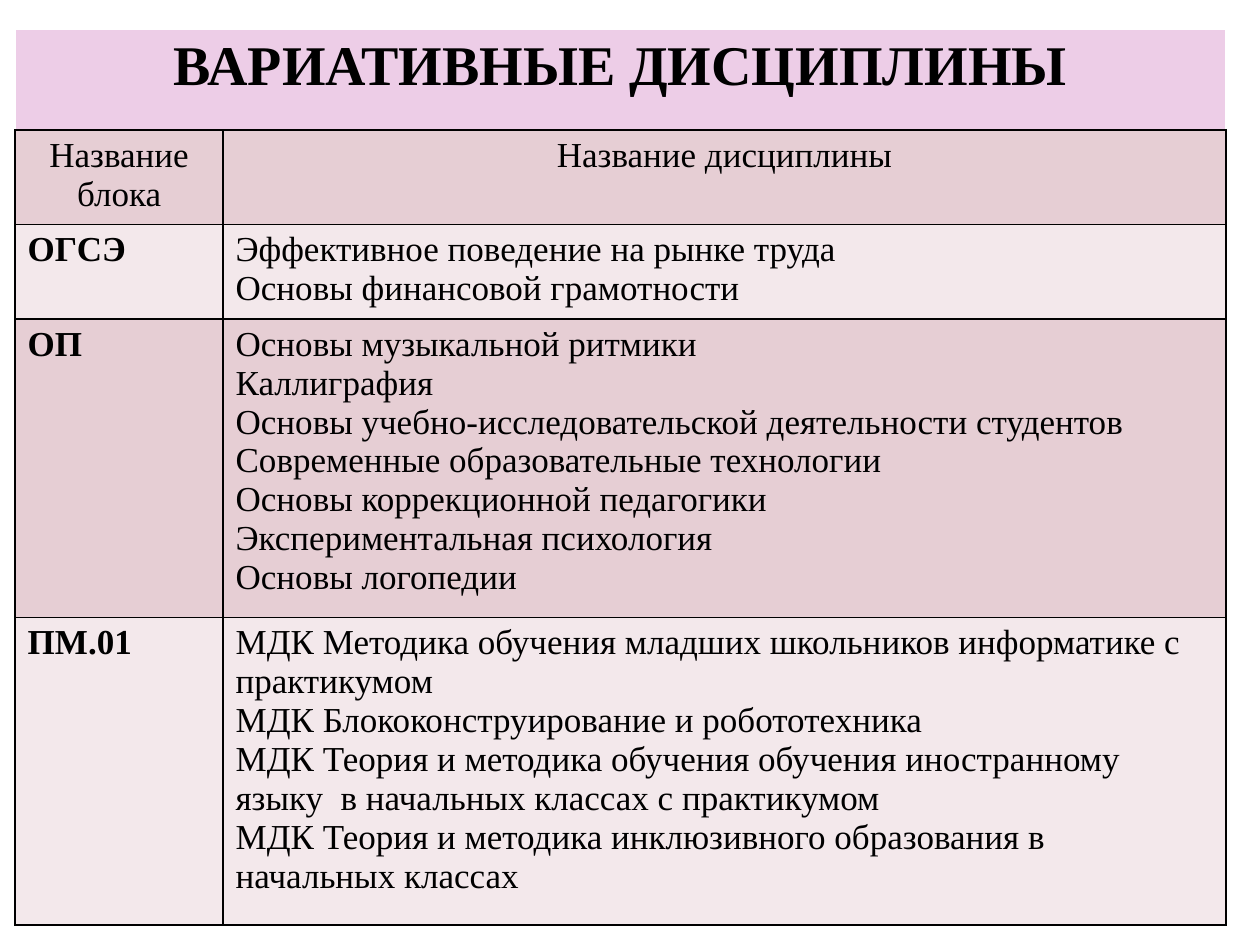
"""Build a slide with a table of elective disciplines grouped by block."""
from lxml import etree
from pptx import Presentation
from pptx.dml.color import RGBColor
from pptx.enum import text
from pptx.oxml import ns
from pptx.util import Inches, Pt

TITLE = "ВАРИАТИВНЫЕ ДИСЦИПЛИНЫ"
HEADERS = ("Название блока", "Название дисциплины")
BLOCKS = [
    ("ОГСЭ", [
        "Эффективное поведение на рынке труда",
        "Основы финансовой грамотности",
    ]),
    ("ОП", [
        "Основы музыкальной ритмики",
        "Каллиграфия",
        "Основы учебно-исследовательской деятельности студентов",
        "Современные образовательные технологии",
        "Основы коррекционной педагогики",
        "Экспериментальная психология",
        "Основы логопедии",
    ]),
    ("ПМ.01", [
        "МДК Методика обучения младших школьников информатике с практикумом",
        "МДК Блококонструирование и робототехника",
        "МДК Теория и методика обучения обучения иностранному языку  в начальных классах с практикумом",
        "МДК Теория и методика инклюзивного образования в начальных классах",
    ]),
]
COLUMN_WIDTHS = (1.65, 7.96)
ROW_HEIGHTS = (0.8, 0.75, 0.75, 2.37, 2.44)
FONT = "Times New Roman"
BLACK = RGBColor(0x00, 0x00, 0x00)
WHITE = RGBColor(0xFF, 0xFF, 0xFF)
LILAC = RGBColor(0xED, 0xCD, 0xE7)
ROSE = RGBColor(0xE6, 0xCE, 0xD4)
PALE_ROSE = RGBColor(0xF3, 0xE8, 0xEB)


def add_borders(cell, outer):
    properties = cell._tc.get_or_add_tcPr()
    for side in ("lnL", "lnR", "lnT", "lnB"):
        color = BLACK if side == "lnB" else outer
        line = etree.SubElement(properties, ns.qn("a:" + side), w=str(Pt(1)))
        fill = etree.SubElement(line, ns.qn("a:solidFill"))
        etree.SubElement(fill, ns.qn("a:srgbClr"), val=str(color))


def style_cell(cell, fill, outer=BLACK):
    add_borders(cell, outer)
    cell.fill.solid()
    cell.fill.fore_color.rgb = fill


def write_cell(cell, lines, size=20, bold=False, centered=False):
    cell.text_frame.text = "\n".join(lines)
    for para in cell.text_frame.paragraphs:
        para.alignment = text.PP_ALIGN.CENTER if centered else text.PP_ALIGN.LEFT
        for span in para.runs:
            span.font.name = FONT
            span.font.size = Pt(size)
            span.font.bold = bold
            span.font.color.rgb = BLACK


def main():
    deck = Presentation()
    deck.slide_width, deck.slide_height = Inches(10), Inches(7.5)
    page = deck.slides.add_slide(deck.slide_layouts[6])
    table = page.shapes.add_table(
        len(ROW_HEIGHTS), len(COLUMN_WIDTHS), Inches(0.12), Inches(0.23),
        Inches(sum(COLUMN_WIDTHS)), Inches(sum(ROW_HEIGHTS))).table
    for column, width in zip(table.columns, COLUMN_WIDTHS):
        column.width = Inches(width)
    for row, height in zip(table.rows, ROW_HEIGHTS):
        row.height = Inches(height)

    for index, row in enumerate(table.rows):
        for cell in row.cells:
            if index == 0:
                style_cell(cell, LILAC, WHITE)
            else:
                style_cell(cell, ROSE if index % 2 else PALE_ROSE)

    table.cell(0, 0).merge(table.cell(0, 1))
    write_cell(table.cell(0, 0), [TITLE], size=32, bold=True, centered=True)
    for column, header in enumerate(HEADERS):
        write_cell(table.cell(1, column), [header], centered=True)
    for row, (block, disciplines) in enumerate(BLOCKS, start=2):
        write_cell(table.cell(row, 0), [block], bold=True)
        write_cell(table.cell(row, 1), disciplines)

    deck.save("out.pptx")


if __name__ == "__main__":
    main()
